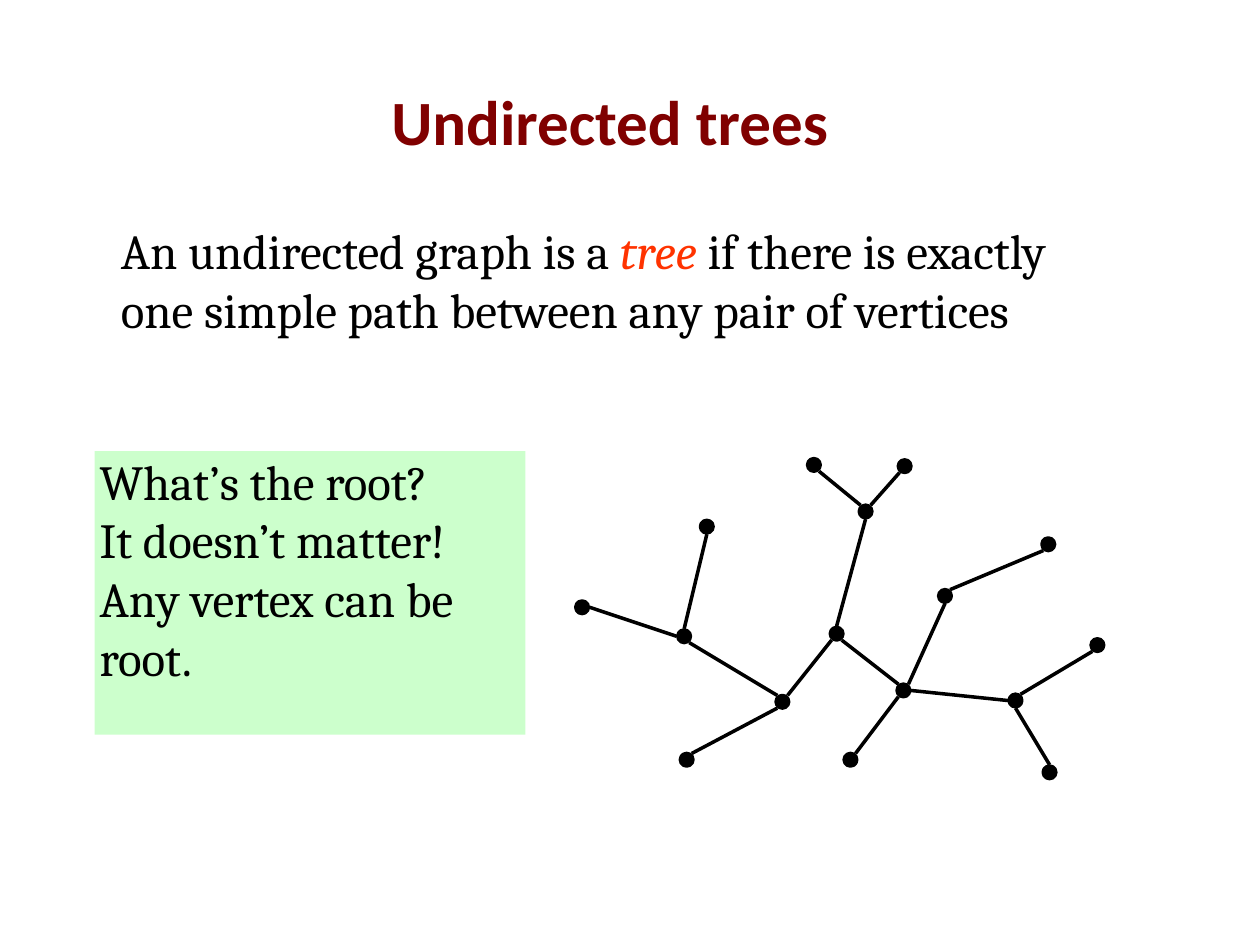
from typing import NamedTuple

from lxml import etree
from pptx import Presentation
from pptx.dml.color import RGBColor
from pptx.enum.shapes import MSO_CONNECTOR, MSO_SHAPE
from pptx.enum.text import MSO_ANCHOR, PP_ALIGN
from pptx.oxml.ns import qn
from pptx.util import Pt

PX = 9144  # EMU per px, 100 px to the inch
DOT_SIZE = 10
LINE_WIDTH = Pt(2)

BLACK = RGBColor(0x00, 0x00, 0x00)
MAROON = RGBColor(0x80, 0x00, 0x00)
ORANGE_RED = RGBColor(0xFF, 0x33, 0x00)
PALE_GREEN = RGBColor(0xCC, 0xFF, 0xCC)

OVAL, RECTANGLE = MSO_SHAPE.OVAL, MSO_SHAPE.RECTANGLE
STRAIGHT = MSO_CONNECTOR.STRAIGHT
CENTER, LEFT = PP_ALIGN.CENTER, PP_ALIGN.LEFT
MIDDLE, TOP = MSO_ANCHOR.MIDDLE, MSO_ANCHOR.TOP


class Vertex(NamedTuple):
    x: int
    y: int


class Edge(NamedTuple):
    start: str
    start_side: str
    end: str
    end_side: str


class Span(NamedTuple):
    text: str
    color: RGBColor = BLACK
    italic: bool = False


# Vertex centres, in px
VERTICES = {
    "far left": Vertex(462, 482),
    "left hub": Vertex(543, 505),
    "left top": Vertex(561, 418),
    "left joint": Vertex(621, 557),
    "left bottom": Vertex(545, 603),
    "middle": Vertex(664, 503),
    "upper hub": Vertex(687, 406),
    "upper left": Vertex(646, 369),
    "upper right": Vertex(718, 370),
    "right joint": Vertex(717, 548),
    "middle bottom": Vertex(675, 603),
    "right bend": Vertex(750, 473),
    "right top": Vertex(832, 432),
    "right hub": Vertex(806, 556),
    "far right": Vertex(871, 512),
    "right bottom": Vertex(833, 613),
}

# Where an edge meets the rim of a vertex, relative to its centre
SIDES = {
    "N": (0, -6), "S": (0, 6), "W": (-6, 0), "E": (6, 0),
    "NW": (-4, -5), "NE": (4, -5), "SW": (-4, 5), "SE": (4, 5),
}

EDGES = [
    Edge("far left", "E", "left hub", "W"),
    Edge("left hub", "N", "left top", "S"),
    Edge("left hub", "SE", "left joint", "NW"),
    Edge("left bottom", "NE", "left joint", "SW"),
    Edge("left joint", "NE", "middle", "SW"),
    Edge("middle", "SE", "right joint", "NW"),
    Edge("middle bottom", "NE", "right joint", "SW"),
    Edge("middle", "N", "upper hub", "S"),
    Edge("right joint", "NE", "right bend", "S"),
    Edge("right bend", "NE", "right top", "SW"),
    Edge("right joint", "E", "right hub", "W"),
    Edge("upper hub", "NE", "upper right", "SW"),
    Edge("upper left", "SE", "upper hub", "NW"),
    Edge("right hub", "NE", "far right", "SW"),
    Edge("right bottom", "N", "right hub", "S"),
]


def set_frame(shape, insets: tuple[int, ...], anchor) -> None:
    frame = shape.text_frame
    frame.word_wrap = True
    frame.vertical_anchor = anchor
    (frame.margin_left, frame.margin_top,
     frame.margin_right, frame.margin_bottom) = [inset * PX for inset in insets]


def add_text(para, spans: list[Span], font: str, size: int,
             align=LEFT, bold: bool = False, first_indent: int = 0) -> None:
    para.alignment = align
    properties = para._p.get_or_add_pPr()
    properties.set("marL", str(4 * PX))
    properties.set("indent", str(first_indent * PX))
    para.text = "".join(span.text for span in spans) if len(spans) == 1 else ""
    if len(spans) > 1:
        for span in spans:
            para.add_run().text = span.text
    for index, run in enumerate(para.runs):
        span = spans[min(index, len(spans) - 1)]
        run.font.name = font
        run.font.size = Pt(size)
        run.font.bold = bold
        run.font.italic = span.italic
        run.font.color.rgb = span.color


def add_box(page, left: int, top: int, width: int, height: int):
    return page.shapes.add_textbox(left * PX, top * PX, width * PX, height * PX)


def draw_vertex(page, vertex: Vertex) -> None:
    dot = page.shapes.add_shape(
        OVAL, (vertex.x - DOT_SIZE // 2) * PX, (vertex.y - DOT_SIZE // 2) * PX,
        DOT_SIZE * PX, DOT_SIZE * PX)
    dot.shadow.inherit = False
    dot.fill.solid()
    dot.fill.fore_color.rgb = BLACK
    dot.line.color.rgb = BLACK
    dot.line.width = LINE_WIDTH


def rim_point(name: str, side: str) -> tuple[int, int]:
    vertex, (dx, dy) = VERTICES[name], SIDES[side]
    return (vertex.x + dx) * PX, (vertex.y + dy) * PX


def draw_edge(page, edge: Edge) -> None:
    line = page.shapes.add_connector(
        STRAIGHT, *rim_point(edge.start, edge.start_side),
        *rim_point(edge.end, edge.end_side))
    line.line.color.rgb = BLACK
    line.line.width = LINE_WIDTH
    etree.SubElement(line._element.spPr, qn("a:effectLst"))


def main() -> None:
    deck = Presentation()
    deck.slide_width, deck.slide_height = 1000 * PX, 750 * PX
    page = deck.slides.add_slide(deck.slide_layouts[6])

    # Title
    title = add_box(page, 42, 58, 892, 75)
    set_frame(title, (6, 6, 14, 6), MIDDLE)
    add_text(title.text_frame.paragraphs[0], [Span("Undirected trees", MAROON)],
             "Calibri", 36, CENTER, bold=True, first_indent=-4)

    # Definition
    definition = add_box(page, 92, 175, 754, 125)
    set_frame(definition, (0, 0, 4, 0), TOP)
    add_text(definition.text_frame.paragraphs[0], [
        Span("An undirected graph is a "),
        Span("tree", ORANGE_RED, italic=True),
        Span(" if there is exactly one simple path between any pair of vertices"),
    ], "Cambria", 28)

    # Tree
    for vertex in VERTICES.values():
        draw_vertex(page, vertex)
    for edge in EDGES:
        draw_edge(page, edge)

    # Question about the root
    question = page.shapes.add_shape(
        RECTANGLE, 75 * PX, 358 * PX, 342 * PX, 225 * PX)
    question.shadow.inherit = False
    question.fill.solid()
    question.fill.fore_color.rgb = PALE_GREEN
    question.line.fill.background()
    set_frame(question, (0, 0, 4, 0), TOP)
    frame = question.text_frame
    add_text(frame.paragraphs[0], [Span("What’s the root?")], "Cambria", 28)
    add_text(frame.add_paragraph(),
             [Span("It doesn’t matter!\nAny vertex can be root.")], "Cambria", 28)

    deck.save("out.pptx")


if __name__ == "__main__":
    main()
